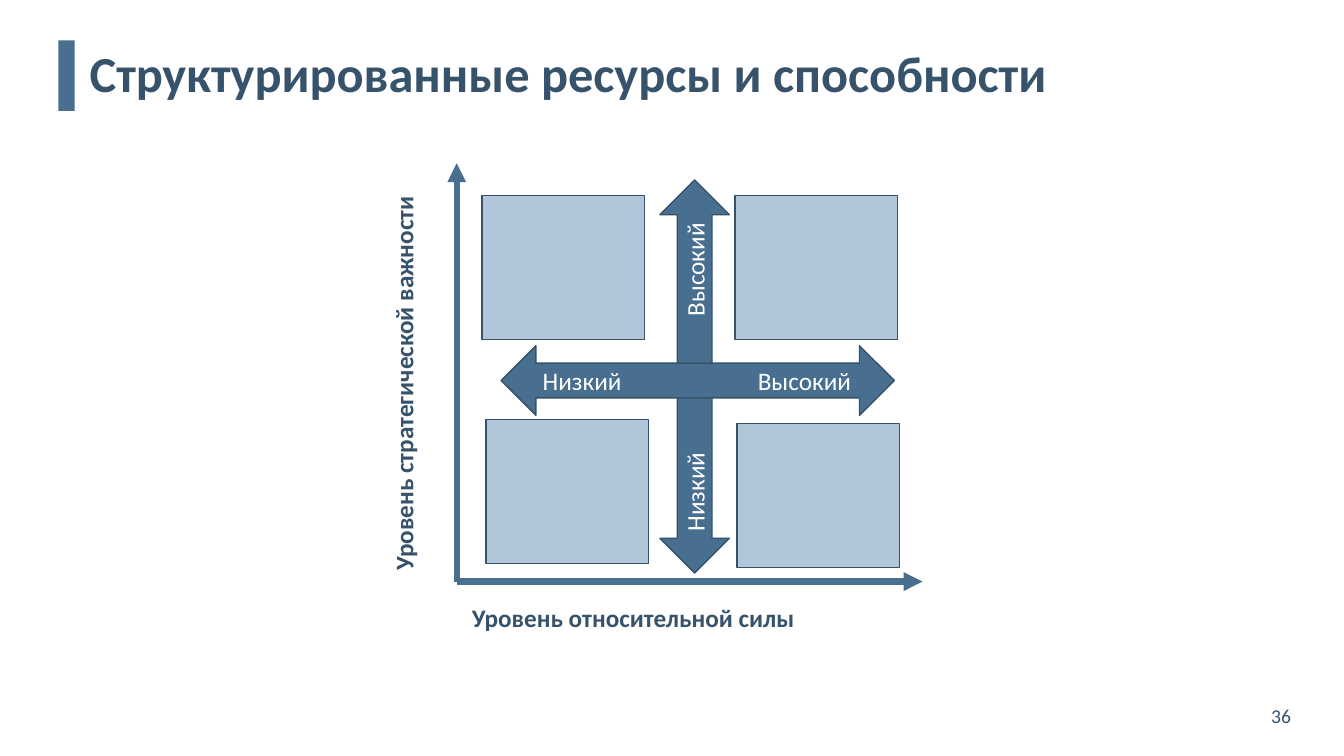
from lxml import etree
from pptx import Presentation
from pptx.dml.color import RGBColor
from pptx.enum.shapes import MSO_CONNECTOR, MSO_SHAPE
from pptx.enum.text import MSO_ANCHOR, PP_ALIGN
from pptx.oxml.ns import qn
from pptx.util import Inches, Pt

RECT = MSO_SHAPE.RECTANGLE
DOUBLE_ARROW = MSO_SHAPE.LEFT_RIGHT_ARROW
STRAIGHT = MSO_CONNECTOR.STRAIGHT
MIDDLE = MSO_ANCHOR.MIDDLE
LEFT, CENTER = PP_ALIGN.LEFT, PP_ALIGN.CENTER

FONT = "Calibri"
BLUE, PALE, OUTLINE, INK, WHITE = "496F90", "B1C6D8", "36526B", "37536C", "FFFFFF"


def color(hex_value):
    return RGBColor.from_string(hex_value)


def write(sp, text, size=18, ink=INK, bold=False, align=LEFT, spacing=None):
    """Put one formatted paragraph into a shape and return it."""
    tf = sp.text_frame
    tf.word_wrap = True
    tf.vertical_anchor = MIDDLE
    p = tf.paragraphs[0]
    p.alignment = align
    if spacing:
        p.line_spacing = spacing
    r = p.add_run()
    r.text = text
    r.font.name, r.font.size, r.font.bold = FONT, Pt(size), bold
    r.font.color.rgb = color(ink)
    return p


def add_text(s, box, text, rotation=0, **fmt):
    sp = s.shapes.add_textbox(*map(Inches, box))
    sp.rotation = rotation
    write(sp, text, **fmt)


def add_block(s, kind, box, fill, outline=None):
    sp = s.shapes.add_shape(kind, *map(Inches, box))
    sp.shadow.inherit = False
    sp.fill.solid()
    sp.fill.fore_color.rgb = color(fill)
    if outline:
        sp.line.color.rgb = color(outline)
        sp.line.width = Pt(1)
    else:
        sp.line.fill.background()
    return sp


def add_axis(s, start, end):
    cn = s.shapes.add_connector(STRAIGHT, *map(Inches, start + end))
    cn.line.color.rgb = color(BLUE)
    cn.line.width = Pt(4.5)
    etree.SubElement(cn.line._get_or_add_ln(), qn("a:tailEnd"), type="triangle")
    etree.SubElement(cn._element.spPr, qn("a:effectLst"))


def add_scale_arrow(s, box, low, high, rotation=0):
    """Double arrow with one label at each end, set apart by a right tab."""
    sp = add_block(s, DOUBLE_ARROW, box, BLUE, OUTLINE)
    sp.rotation = rotation
    tf = sp.text_frame
    tf.margin_left, tf.margin_right = Inches(0.24), Inches(0.1)
    p = write(sp, f"{low}\t{high}", ink=WHITE)
    tabs = etree.SubElement(p._p.get_or_add_pPr(), qn("a:tabLst"))
    etree.SubElement(tabs, qn("a:tab"), pos=str(Inches(3.06)), algn="r")


def add_header(s, left, top, title):
    add_block(s, RECT, (left, top, 0.16, 0.7), BLUE)
    add_text(s, (left + 0.21, top + 0.01, 12.19, 0.7), title,
             size=36, bold=True, spacing=0.9)


def add_matrix(s, left, bottom):
    """Two-by-two matrix whose axes meet at the given corner."""
    for dx, dy in ((2.78, -1.57), (0.29, -1.61), (2.76, -3.83), (0.25, -3.83)):
        add_block(s, RECT, (left + dx, bottom + dy, 1.61, 1.43), PALE, OUTLINE)

    origin = (left, bottom)
    add_axis(s, origin, (left, bottom - 4.15))
    add_axis(s, origin, (left + 4.62, bottom))

    for dx, dy, rotation in ((0.41, -2.38, 270), (0.44, -2.34, 0)):
        add_scale_arrow(s, (left + dx, bottom + dy, 3.9, 0.69),
                        "Низкий", "Высокий", rotation)

    add_text(s, (left - 2.71, bottom - 2.68, 4.36, 1.43),
             "Уровень стратегической важности", rotation=270, bold=True, align=CENTER)
    add_text(s, (left - 0.43, bottom - 0.36, 4.36, 1.43),
             "Уровень относительной силы", bold=True, align=CENTER)


def main():
    prs = Presentation()
    prs.slide_width, prs.slide_height = Inches(13.33), Inches(7.5)
    s = prs.slides.add_slide(prs.slide_layouts[6])
    s.background.fill.solid()
    s.background.fill.fore_color.rgb = color(WHITE)
    add_header(s, 0.58, 0.4, "Структурированные ресурсы и способности")
    add_matrix(s, 4.53, 5.77)
    add_text(s, (12.51, 6.88, 0.72, 0.44), "36", size=14)
    prs.save("out.pptx")


if __name__ == "__main__":
    main()
